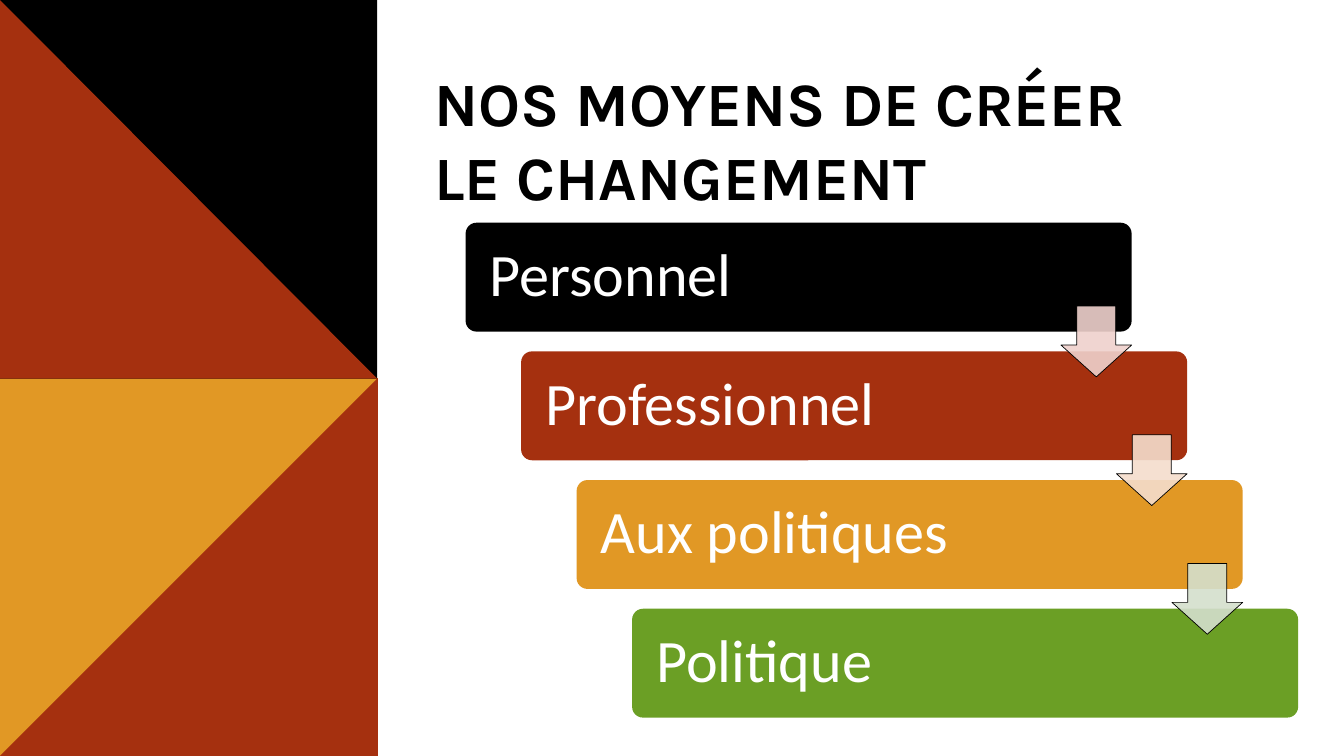
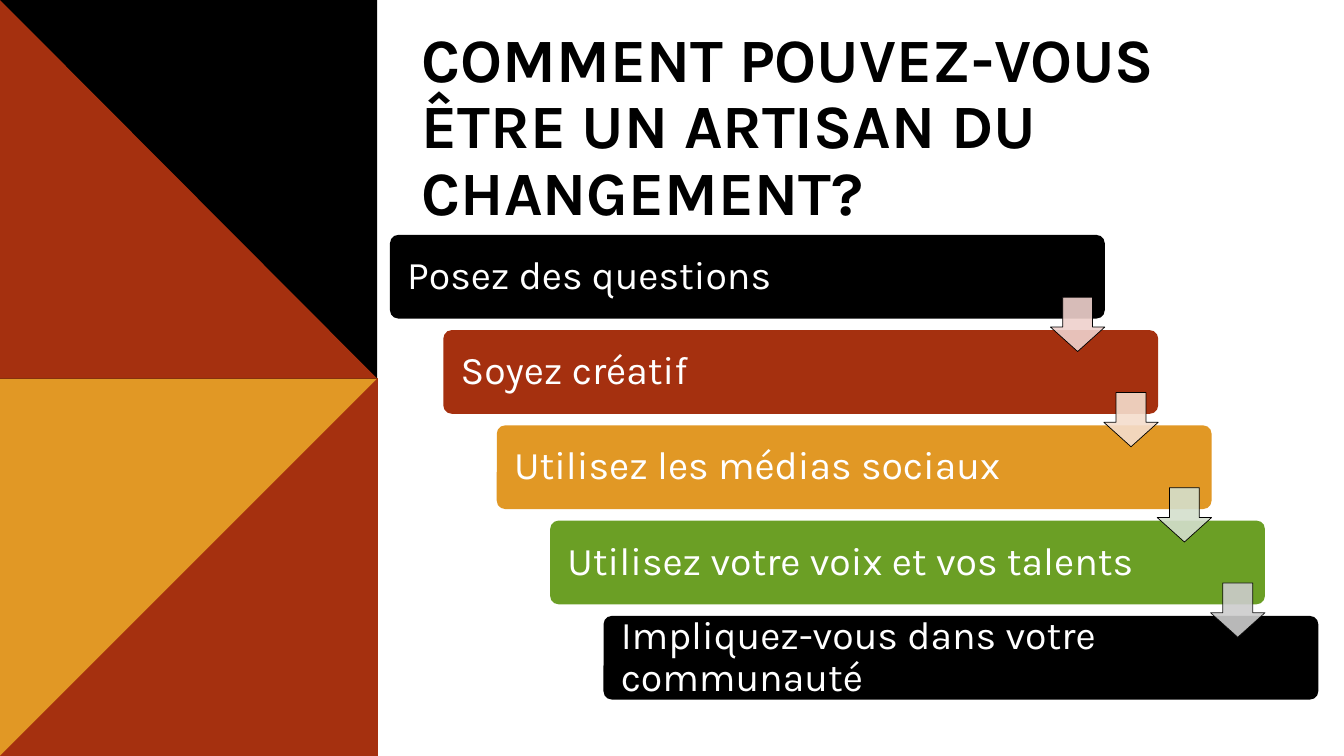
from dataclasses import dataclass
from typing import NamedTuple

from lxml.etree import SubElement
from pptx import Presentation
from pptx.dml.color import RGBColor
from pptx.enum.shapes import MSO_SHAPE
from pptx.enum.text import MSO_ANCHOR, MSO_AUTO_SIZE, PP_ALIGN
from pptx.oxml.ns import qn
from pptx.util import Pt


class Box(NamedTuple):
    left: float
    top: float
    width: float
    height: float

    def lengths(self):
        return [Pt(value) for value in self]


@dataclass(frozen=True)
class Theme:
    black: str = "000000"
    white: str = "FFFFFF"
    rust: str = "A5300F"
    amber: str = "E19825"
    green: str = "6B9F25"
    arrows: tuple = ("EFD1CC", "F4DDCD", "D4DFCD", "CCCCCC")
    arrow_opacity: int = 90
    arrow_line: float = 0.5
    title_font: str = "Karla"
    title_size: int = 44
    bar_line_spacing: float = 0.9

    def bar_colour(self, index):
        return (self.black, self.rust, self.amber, self.green)[index % 4]


@dataclass(frozen=True)
class Staircase:
    box: Box
    labels: tuple
    font: str
    size: int
    inset: float
    bar_width: float
    bar_height: float


THEME = Theme()
PAGE_WIDTH, PAGE_HEIGHT = 960, 540
PANEL_TOP = Box(0, 0, 269.5, 270.5)
PANEL_BOTTOM = Box(0, 270, 270, 270)


def paint(shape, colour):
    shape.shadow.inherit = False
    shape.fill.solid()
    shape.fill.fore_color.rgb = RGBColor.from_string(colour)
    shape.line.fill.background()


def set_opacity(shape, percent):
    for colour in shape.element.spPr.iter(qn("a:srgbClr")):
        SubElement(colour, qn("a:alpha")).set("val", str(percent * 1000))


def style_text(frame, font, size, colour, bold=False):
    for para in frame.paragraphs:
        para.alignment = PP_ALIGN.LEFT
        for span in para.runs:
            span.font.name = font
            span.font.size = Pt(size)
            span.font.bold = bold
            span.font.color.rgb = RGBColor.from_string(colour)


def add_split_square(page, box, square_colour, triangle_colour, corners):
    square = page.shapes.add_shape(MSO_SHAPE.RECTANGLE, *box.lengths())
    paint(square, square_colour)
    points = [
        (Pt(box.left + x * box.width), Pt(box.top + y * box.height))
        for x, y in corners
    ]
    builder = page.shapes.build_freeform(*points[0])
    builder.add_line_segments(points[1:], close=True)
    triangle = builder.convert_to_shape()
    paint(triangle, triangle_colour)
    return [square, triangle]


def add_side_panel(deck, layout):
    for placeholder in list(layout.placeholders)[1:]:
        placeholder.element.getparent().remove(placeholder.element)
    page = deck.slides[0]
    parts = add_split_square(
        page, PANEL_BOTTOM, THEME.amber, THEME.rust, [(1, 0), (1, 1), (0, 1)]
    ) + add_split_square(
        page, PANEL_TOP, THEME.black, THEME.rust, [(0, 0), (1, 1), (0, 1)]
    )
    layout_title = layout.placeholders[0].element
    for part in parts:
        layout_title.addprevious(part.element)


def add_title(page, box, text, line_spacing):
    title = page.shapes.title
    title.left, title.top, title.width, title.height = box.lengths()
    frame = title.text_frame
    frame.text = text
    frame.word_wrap = True
    frame.auto_size = MSO_AUTO_SIZE.NONE
    frame.vertical_anchor = MSO_ANCHOR.TOP
    frame.paragraphs[0].line_spacing = line_spacing
    style_text(frame, THEME.title_font, THEME.title_size, THEME.black, True)


def add_bar(page, box, stairs, label, colour, right_inset):
    bar = page.shapes.add_shape(MSO_SHAPE.ROUNDED_RECTANGLE, *box.lengths())
    bar.adjustments[0] = 0.1
    paint(bar, colour)
    frame = bar.text_frame
    frame.text = label
    frame.word_wrap = True
    frame.vertical_anchor = MSO_ANCHOR.MIDDLE
    frame.margin_left = Pt(stairs.inset + 2)
    frame.margin_right = Pt(right_inset)
    frame.margin_top = frame.margin_bottom = Pt(stairs.inset)
    frame.paragraphs[0].line_spacing = THEME.bar_line_spacing
    style_text(frame, stairs.font, stairs.size, THEME.white)


def add_arrow(page, box, colour, see_through_line):
    arrow = page.shapes.add_shape(MSO_SHAPE.DOWN_ARROW, *box.lengths())
    arrow.adjustments[0] = 0.55
    arrow.adjustments[1] = 0.45
    paint(arrow, colour)
    if not see_through_line:
        set_opacity(arrow, THEME.arrow_opacity)
    arrow.line.color.rgb = RGBColor.from_string(THEME.black)
    arrow.line.width = Pt(THEME.arrow_line)
    if see_through_line:
        set_opacity(arrow, THEME.arrow_opacity)


def add_staircase(page, stairs):
    box = stairs.box
    width = box.width * stairs.bar_width
    height = box.height * stairs.bar_height
    gaps = len(stairs.labels) - 1
    step_x = (box.width - width) / gaps
    step_y = (box.height - height) / gaps
    side = 0.65 * height
    bars = [
        Box(box.left + i * step_x, box.top + i * step_y, width, height)
        for i in range(gaps + 1)
    ]
    for i, (bar, label) in enumerate(zip(bars, stairs.labels)):
        right_inset = step_x + side + stairs.inset
        add_bar(page, bar, stairs, label, THEME.bar_colour(i), right_inset)
    for i, (bar, colour) in enumerate(zip(bars[:-1], THEME.arrows)):
        middle = bar.top + (height + step_y) / 2
        arrow = Box(bar.left + width - side, middle - side / 2, side, side)
        add_arrow(page, arrow, colour, see_through_line=i == 3)


def add_staircase_slide(deck, layout, title_box, title, line_spacing, stairs):
    page = deck.slides.add_slide(layout)
    add_title(page, title_box, title, line_spacing)
    add_staircase(page, stairs)


def main():
    deck = Presentation()
    deck.slide_width, deck.slide_height = Pt(PAGE_WIDTH), Pt(PAGE_HEIGHT)
    layout = deck.slide_layouts.get_by_name("Title Only")
    add_staircase_slide(
        deck,
        layout,
        Box(303, 43, 533, 60.5),
        "NOS MOYENS DE CRÉER LE CHANGEMENT",
        1.0,
        Staircase(
            box=Box(332.6, 159.1, 594.7, 353.5),
            labels=("Personnel", "Professionnel", "Aux politiques", "Politique"),
            font="Calibri",
            size=43,
            inset=13,
            bar_width=0.8,
            bar_height=0.22,
        ),
    )
    add_staircase_slide(
        deck,
        layout,
        Box(294, 17.3, 648, 96),
        "COMMENT POUVEZ-VOUS ÊTRE UN ARTISAN DU CHANGEMENT?",
        0.9,
        Staircase(
            box=Box(278.6, 167.8, 663.1, 331.9),
            labels=(
                "Posez des questions",
                "Soyez créatif",
                "Utilisez les médias sociaux",
                "Utilisez votre voix et vos talents",
                "Impliquez-vous dans votre communauté",
            ),
            font="Karla",
            size=28,
            inset=8.6,
            bar_width=0.77,
            bar_height=0.18,
        ),
    )
    add_side_panel(deck, layout)
    deck.save("out.pptx")


if __name__ == "__main__":
    main()
